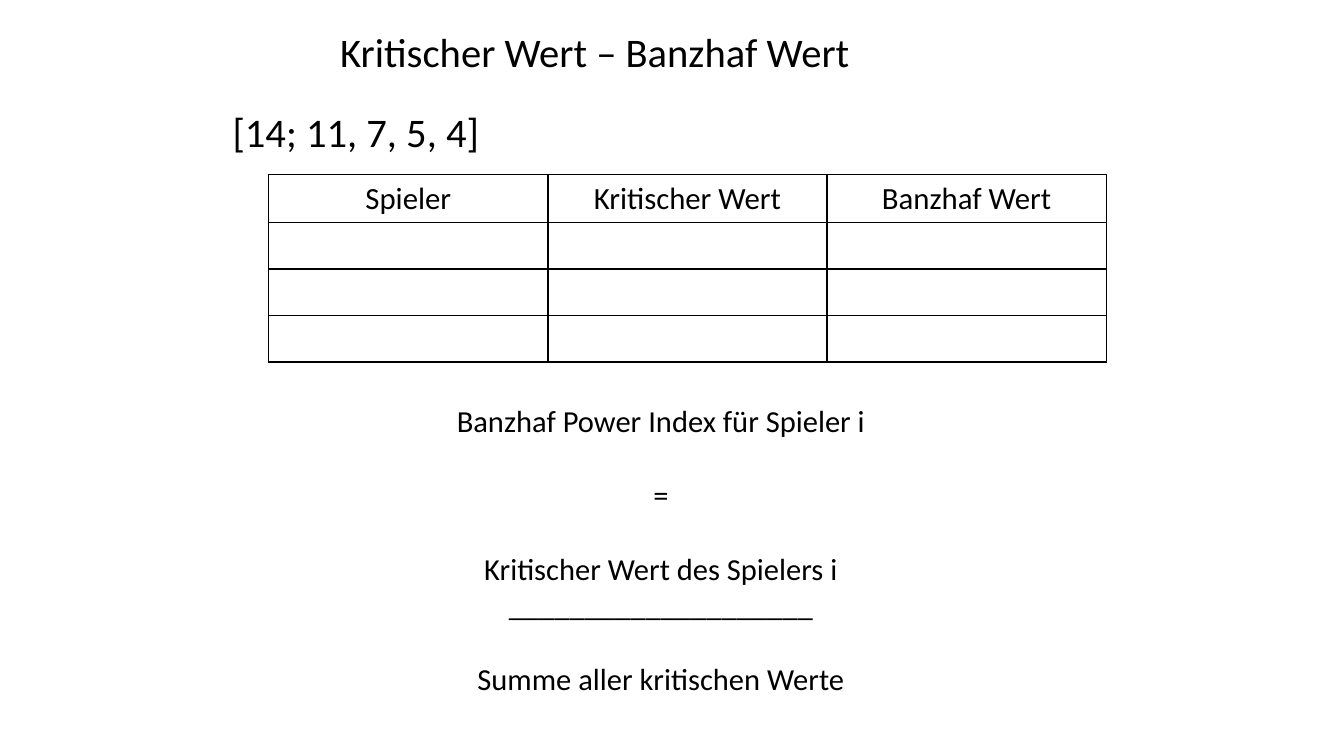
from lxml import etree
from pptx import Presentation
from pptx.dml.color import RGBColor
from pptx.enum.text import MSO_ANCHOR, MSO_AUTO_SIZE, PP_ALIGN
from pptx.oxml.ns import qn
from pptx.util import Inches, Pt

BLACK = RGBColor(0x00, 0x00, 0x00)
WHITE = RGBColor(0xFF, 0xFF, 0xFF)
CENTER = PP_ALIGN.CENTER
LEFT = PP_ALIGN.LEFT
MIDDLE = MSO_ANCHOR.MIDDLE
TOP = MSO_ANCHOR.TOP
NO_AUTOFIT = MSO_AUTO_SIZE.NONE

FONT = "Calibri"
HEADING_SIZE = 29
TABLE_SIZE = 22
FORMULA_SIZE = 21.8
LINE_GAP = 26.5
COLUMNS, ROWS = 160, 90
UNIT = Inches(7.5) / ROWS

HEADERS = ["Spieler", "Kritischer Wert", "Banzhaf Wert"]
PLAYER_ROWS = 3
FORMULA = [
    ("Banzhaf Power Index für Spieler i", 0),
    ("=", LINE_GAP),
    ("Kritischer Wert des Spielers i", LINE_GAP),
    ("____________________", 0),
    ("Summe aller kritischen Werte", LINE_GAP),
]


def grid(*cells):
    return [round(cell * UNIT) for cell in cells]


def place(part, *cells):
    part.left, part.top, part.width, part.height = grid(*cells)


def style(paragraph, size, alignment):
    paragraph.alignment = alignment
    paragraph.font.name = FONT
    paragraph.font.size = Pt(size)
    paragraph.font.color.rgb = BLACK


def fill_frame(frame, lines, size, alignment, anchor):
    frame.word_wrap = True
    frame.auto_size = NO_AUTOFIT
    frame.vertical_anchor = anchor
    for index, (text, gap) in enumerate(lines):
        paragraph = frame.add_paragraph() if index else frame.paragraphs[0]
        paragraph.text = text
        paragraph.space_before = Pt(gap)
        properties = paragraph._p.get_or_add_pPr()
        properties.set("marL", "0")
        properties.set("indent", "0")
        etree.SubElement(properties, qn("a:buNone"))
        style(paragraph, size, alignment)


def outline_cell(cell):
    cell.fill.solid()
    cell.fill.fore_color.rgb = WHITE
    properties = cell._tc.get_or_add_tcPr()
    for index, side in enumerate(("lnL", "lnR", "lnT", "lnB")):
        border = etree.Element(qn(f"a:{side}"), w=str(Pt(1)))
        fill = etree.SubElement(border, qn("a:solidFill"))
        etree.SubElement(fill, qn("a:srgbClr"), val=str(BLACK))
        properties.insert(index, border)


def add_value_table(slide, *cells):
    frame = slide.shapes.add_table(PLAYER_ROWS + 1, len(HEADERS), *grid(*cells))
    values = frame.table
    for cell in values.iter_cells():
        outline_cell(cell)
    for column, header in enumerate(HEADERS):
        cell = values.cell(0, column)
        cell.text = header
        style(cell.text_frame.paragraphs[0], TABLE_SIZE, CENTER)
        cell.text_frame.paragraphs[0].font.bold = False


def main():
    deck = Presentation()
    deck.slide_width, deck.slide_height = grid(COLUMNS, ROWS)
    slide = deck.slides.add_slide(deck.slide_layouts[1])

    heading = slide.shapes.title
    place(heading, 21, 1.3, 99.7, 9.7)
    fill_frame(heading.text_frame, [("Kritischer Wert – Banzhaf Wert", 0)],
               HEADING_SIZE, CENTER, MIDDLE)

    voting_game = slide.shapes.add_textbox(*grid(26.5, 12.1, 88.7, 8.5))
    fill_frame(voting_game.text_frame, [("[14; 11, 7, 5, 4]", 0)],
               HEADING_SIZE, LEFT, TOP)

    add_value_table(slide, 32, 20.8, 99.7, 22.2)

    power_index = slide.placeholders[1]
    place(power_index, 20.2, 47.3, 117, 36.8)
    fill_frame(power_index.text_frame, FORMULA, FORMULA_SIZE, CENTER, TOP)

    deck.save("out.pptx")


if __name__ == "__main__":
    main()
